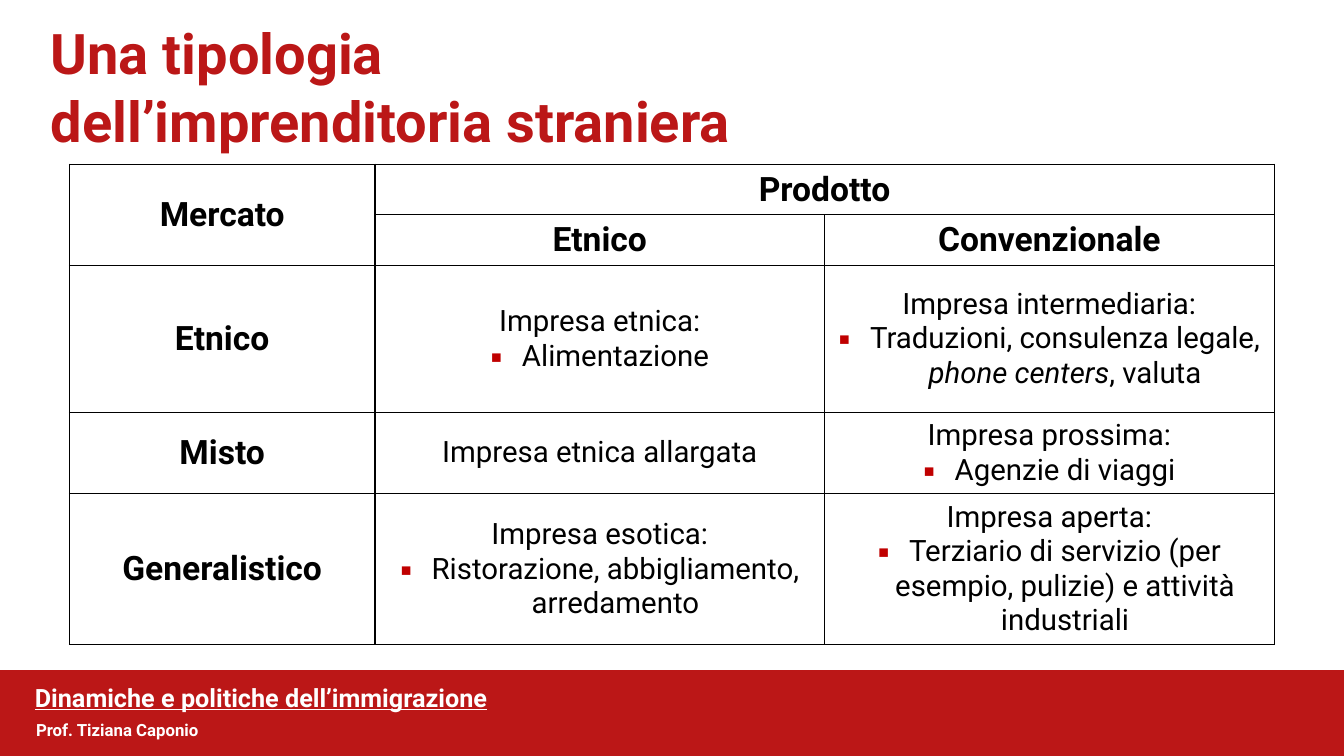
from lxml.etree import SubElement
from pptx import Presentation
from pptx.dml.color import RGBColor
from pptx.enum.shapes import MSO_SHAPE as Shape
from pptx.enum.text import MSO_ANCHOR as Anchor, PP_ALIGN as Align
from pptx.oxml import parse_xml
from pptx.oxml.ns import nsdecls, qn
from pptx.util import Cm, Pt

RED, BULLET_RED, BLACK, WHITE = "BB1717", "C00000", "000000", "FFFFFF"
HEADING = {"size": Pt(24), "bold": True}
ENTRY = {"size": Pt(21), "bold": False}


def color(value):
    return RGBColor.from_string(value)


def assign(target, values):
    for name, value in values.items():
        setattr(target, name, value)


class SlideBuilder:
    font_name = "Roboto"

    def __init__(self, deck):
        self.page = deck.slides.add_slide(deck.slide_layouts[5])

    def add_spans(self, para, text, style, ink):
        for index, part in enumerate(text.split("*")):
            span = para.add_run()
            span.text = part
            assign(span.font, {"name": self.font_name, **style})
            span.font.color.rgb = color(ink)
            if index % 2:
                span.font.italic = True

    def bullet(self, para):
        props = para._p.get_or_add_pPr()
        props.set("marL", str(Cm(0.79)))
        props.set("indent", str(-Cm(0.79)))
        tint = SubElement(props, qn("a:buClr"))
        SubElement(tint, qn("a:srgbClr")).set("val", BULLET_RED)
        SubElement(props, qn("a:buFont")).set("typeface", self.font_name)
        SubElement(props, qn("a:buChar")).set("char", "▪")

    def fill_frame(self, frame, lines, style, ink, layout):
        for index, line in enumerate(lines):
            para = frame.paragraphs[0] if index == 0 else frame.add_paragraph()
            if line.startswith("▪"):
                self.bullet(para)
            assign(para, layout)
            self.add_spans(para, line.removeprefix("▪"), style, ink)

    def title(self, lines, left, top, width, height):
        box = self.page.shapes.title
        assign(box, {"left": left, "top": top, "width": width, "height": height})
        assign(box.text_frame, {"word_wrap": True, "margin_left": Cm(1.28),
                                "vertical_anchor": Anchor.MIDDLE})
        self.fill_frame(box.text_frame, lines, {"size": Pt(40), "bold": True},
                        RED, {"alignment": Align.LEFT, "space_before": Pt(0)})

    def band(self, left, top, width, height):
        shape = self.page.shapes.add_shape(Shape.RECTANGLE, left, top, width, height)
        shape.shadow.inherit = False
        shape.fill.solid()
        shape.fill.fore_color.rgb = color(RED)
        shape.line.color.rgb = color(RED)
        shape.line.width = Pt(1)

    def label(self, text, left, top, width, height, style):
        frame = self.page.shapes.add_textbox(left, top, width, height).text_frame
        frame.word_wrap = True
        self.fill_frame(frame, [text], style, WHITE, {"line_spacing": 0.9})

    def border(self, cell):
        props = cell._tc.get_or_add_tcPr()
        for index, side in enumerate(("lnL", "lnR", "lnT", "lnB")):
            props.insert(index, parse_xml(
                f'<a:{side} {nsdecls("a")} w="{Pt(1)}"><a:solidFill>'
                f'<a:srgbClr val="{BLACK}"/></a:solidFill></a:{side}>'))

    def table(self, left, top, widths, heights, rows, merges):
        grid = self.page.shapes.add_table(
            len(heights), len(widths), left, top, sum(widths), sum(heights)).table
        assign(grid, {"first_row": False, "horz_banding": False})
        for column, width in zip(grid.columns, widths):
            column.width = width
        for row, height in zip(grid.rows, heights):
            row.height = height
        for start, end in merges:
            grid.cell(*start).merge(grid.cell(*end))
        for row_index, row in enumerate(rows):
            for column_index, lines in enumerate(row):
                cell = grid.cell(row_index, column_index)
                cell.vertical_anchor = Anchor.MIDDLE
                cell.fill.solid()
                cell.fill.fore_color.rgb = color(WHITE)
                self.border(cell)
                heading = row_index < 2 or column_index == 0
                self.fill_frame(cell.text_frame, lines, HEADING if heading else ENTRY,
                                BLACK, {"alignment": Align.CENTER})


def main():
    deck = Presentation()
    assign(deck, {"slide_width": Cm(33.87), "slide_height": Cm(19.05)})
    slide = SlideBuilder(deck)
    slide.band(Cm(0), Cm(16.89), Cm(33.87), Cm(2.16))
    slide.title(["Una tipologia", "dell’imprenditoria straniera"],
                Cm(0), Cm(0.33), Cm(33.87), Cm(3.68))
    slide.label("Prof. Tiziana Caponio", Cm(0.66), Cm(18.08), Cm(33), Cm(0.94),
                {"size": Pt(12), "bold": True})
    slide.label("Dinamiche e politiche dell’immigrazione", Cm(0.63), Cm(17.15),
                Cm(33), Cm(0.94), {"size": Pt(18), "bold": True, "underline": True})
    rows = [
        [["Mercato"], ["Prodotto"], []],
        [[], ["Etnico"], ["Convenzionale"]],
        [["Etnico"], ["Impresa etnica:", "▪Alimentazione"],
         ["Impresa intermediaria:",
          "▪Traduzioni, consulenza legale, *phone centers*, valuta"]],
        [["Misto"], ["Impresa etnica allargata"],
         ["Impresa prossima:", "▪Agenzie di viaggi"]],
        [["Generalistico"],
         ["Impresa esotica:", "▪Ristorazione, abbigliamento, arredamento"],
         ["Impresa aperta:",
          "▪Terziario di servizio (per esempio, pulizie) e attività industriali"]],
    ]
    slide.table(Cm(1.75), Cm(4.14), [Cm(7.7), Cm(11.33), Cm(11.33)],
                [Cm(1.26), Cm(1.26), Cm(3.71), Cm(2.04), Cm(3.81)], rows,
                [((0, 0), (1, 0)), ((0, 1), (0, 2))])
    deck.save("out.pptx")


if __name__ == "__main__":
    main()
